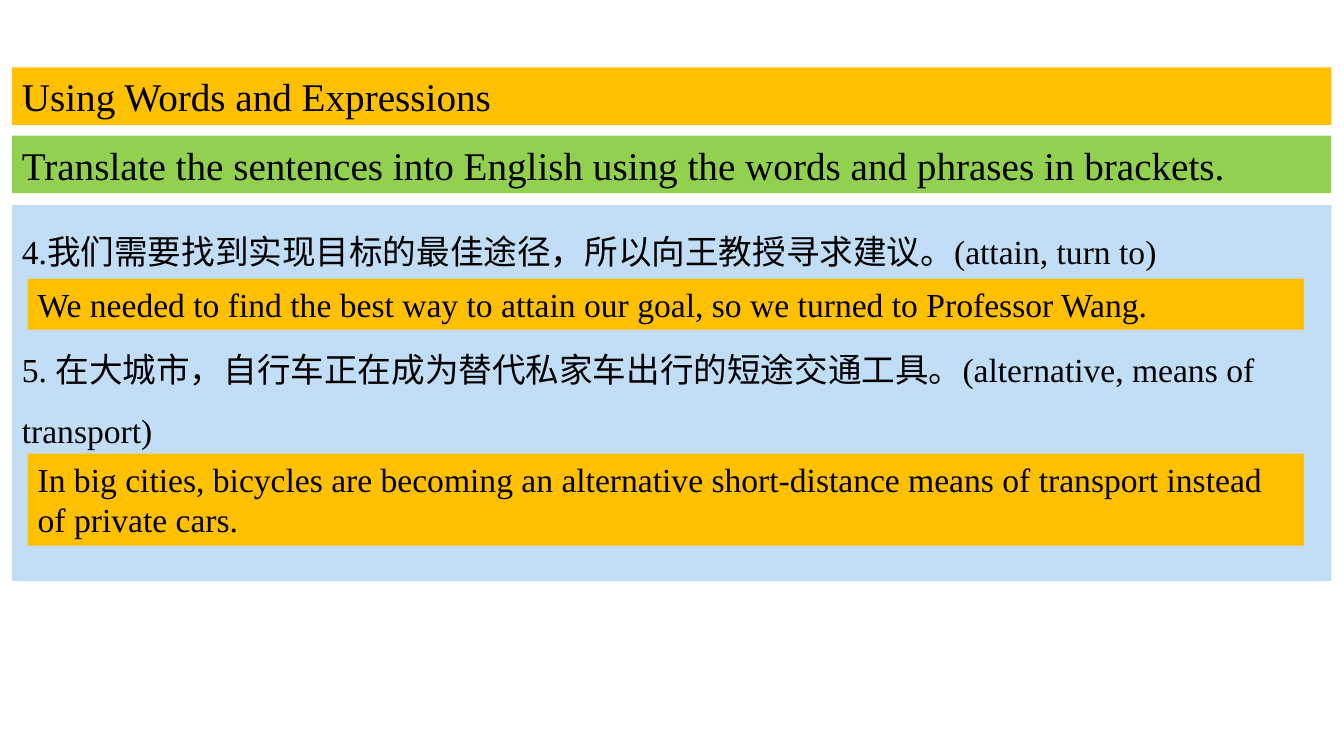
import pptx
import pptx.util
import pptx.dml.color
import pptx.enum.shapes
import pptx.enum.text
from pptx.util import Cm

THEME = {
    "font": "Times New Roman",
    "text": "000000",
    "gold": "FFC000",
    "green": "92D050",
    "blue": "C1DEF6",
    "heading": pptx.util.Pt(28),
    "sentence": pptx.util.Pt(24),
    "answer_gap": pptx.util.Pt(41.4),
}


def rgb(name):
    return pptx.dml.color.RGBColor.from_string(THEME[name])


def fill_panel(shape, box, color, size, lines, line_spacing=1.0):
    shape.left, shape.top, shape.width, shape.height = [Cm(length) for length in box]
    shape.fill.solid()
    shape.fill.fore_color.rgb = rgb(color)
    shape.line.fill.background()
    frame = shape.text_frame
    frame.text = "\n".join(lines)
    frame_format = {
        "word_wrap": True,
        "auto_size": pptx.enum.text.MSO_AUTO_SIZE.NONE,
        "vertical_anchor": pptx.enum.text.MSO_ANCHOR.TOP,
        "margin_left": Cm(0.25),
        "margin_right": Cm(0.25),
        "margin_top": Cm(0.13),
        "margin_bottom": Cm(0.13),
    }
    for name, value in frame_format.items():
        setattr(frame, name, value)
    for index, paragraph in enumerate(frame.paragraphs):
        properties = paragraph._p.get_or_add_pPr()
        properties.set("marL", "0")
        properties.set("indent", "0")
        properties.append(pptx.oxml.xmlchemy.OxmlElement("a:buNone"))
        paragraph_format = {
            "alignment": pptx.enum.text.PP_ALIGN.LEFT,
            "line_spacing": line_spacing,
            "space_before": THEME["answer_gap"] if index else pptx.util.Pt(0),
            "space_after": pptx.util.Pt(0),
        }
        for name, value in paragraph_format.items():
            setattr(paragraph, name, value)
        for run in paragraph.runs:
            run.font.name = THEME["font"]
            run.font.size = THEME[size]
            run.font.color.rgb = rgb("text")


presentation = pptx.Presentation()
presentation.slide_width = Cm(33.87)
presentation.slide_height = Cm(19.05)
slide = presentation.slides.add_slide(presentation.slide_layouts[1])

fill_panel(slide.shapes.title, (0.3, 1.7, 33.25, 1.45), "gold", "heading",
           ["Using Words and Expressions"])
fill_panel(slide.placeholders[1], (0.3, 5.17, 33.25, 9.47), "blue", "sentence", [
    "4.我们需要找到实现目标的最佳途径，所以向王教授寻求建议。(attain, turn to)",
    "5. 在大城市，自行车正在成为替代私家车出行的短途交通工具。(alternative, means of transport)",
], 1.5)

panels = [
    ((0.3, 3.42, 33.25, 1.45), "green", "heading",
     "Translate the sentences into English using the words and phrases in brackets."),
    ((0.7, 7.03, 32.16, 1.28), "gold", "sentence",
     "We needed to find the best way to attain our goal, so we turned to Professor Wang."),
    ((0.7, 11.43, 32.16, 2.32), "gold", "sentence",
     "In big cities, bicycles are becoming an alternative short-distance means of transport "
     "instead of private cars."),
]
for box, color, size, line in panels:
    shape = slide.shapes.add_shape(pptx.enum.shapes.MSO_SHAPE.RECTANGLE, 0, 0, 0, 0)
    shape.shadow.inherit = False
    fill_panel(shape, box, color, size, [line])

presentation.save("out.pptx")
